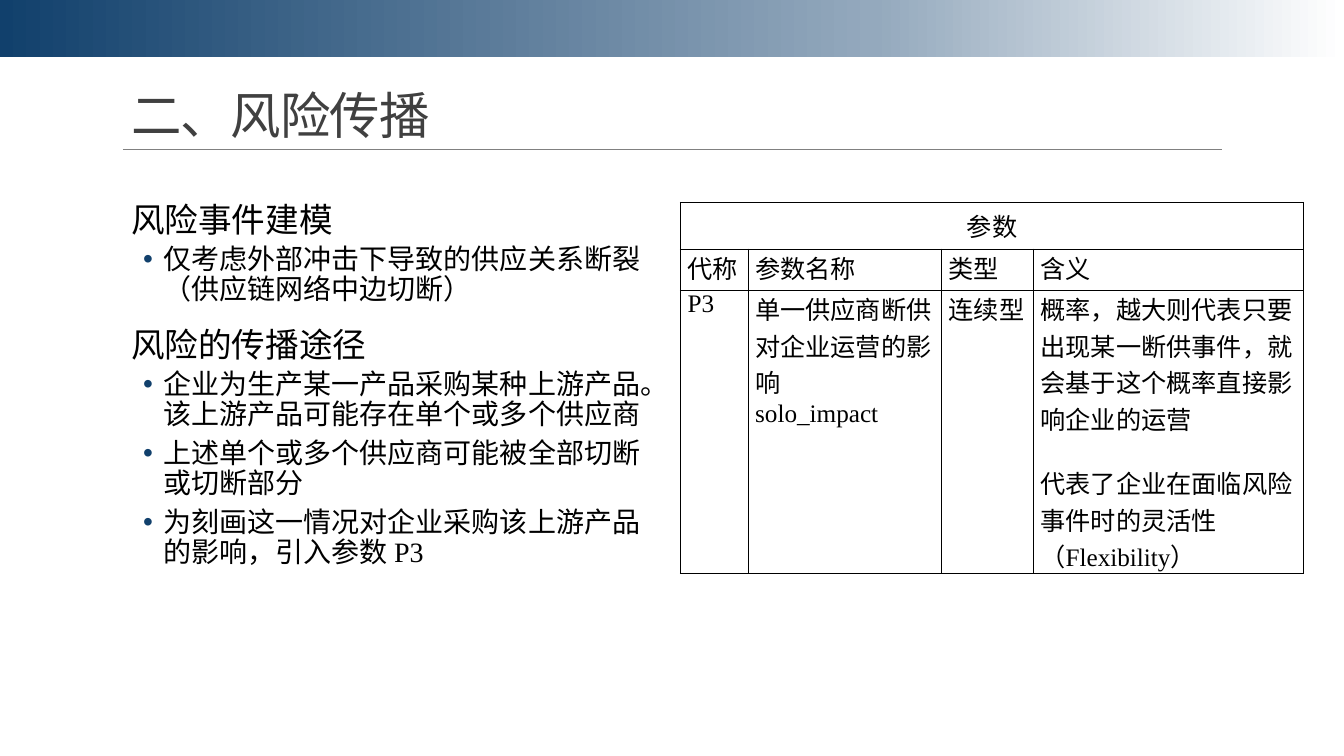
from copy import deepcopy

from lxml import etree
from pptx import Presentation, util as u
from pptx.dml.color import RGBColor
from pptx.enum import lang, shapes, text
from pptx.oxml import parse_xml
from pptx.oxml.ns import nsdecls, qn

FONT = "Times New Roman"
NAVY, BLACK, GREY, RULE_GREY = "11406C", "000000", "404040", "808080"
BAR_STOPS = [(0, NAVY), (0.65, "94A9BD"), (1, "FFFFFF")]

HEADING = {"size": 24, "before": 12, "after": 2, "left": 0.1, "indent": 0}
BULLET = {"size": 20, "before": 2, "after": 4, "left": 0.42, "indent": -0.2}

TOPICS = [
    ("风险事件建模", ["仅考虑外部冲击下导致的供应关系断裂（供应链网络中边切断）"]),
    ("风险的传播途径", [
        "企业为生产某一产品采购某种上游产品。该上游产品可能存在单个或多个供应商",
        "上述单个或多个供应商可能被全部切断或切断部分",
        "为刻画这一情况对企业采购该上游产品的影响，引入参数 P3",
    ]),
]

COLUMN_WIDTHS = [0.67, 1.92, 0.91, 2.68]
ROW_HEIGHTS = [0.41, 0.41, 2.52]
PARAMETER_ROWS = [
    [["参数"], [], [], []],
    [["代称"], ["参数名称"], ["类型"], ["含义"]],
    [
        ["P3"],
        ["单一供应商断供对企业运营的影响", "solo_impact"],
        ["连续型"],
        ["概率，越大则代表只要出现某一断供事件，就会基于这个概率直接影响企业的运营",
         "代表了企业在面临风险事件时的灵活性（Flexibility）"],
    ],
]


def color(value):
    """Turn a hex string into a colour."""
    return RGBColor.from_string(value)


def apply(target, values):
    """Set every attribute in a dict of format values."""
    for name, value in values.items():
        setattr(target, name, value)


def place(shape, box):
    """Move a shape to a box of left, top, width and height in inches."""
    names = ("left", "top", "width", "height")
    apply(shape, {name: u.Inches(value) for name, value in zip(names, box)})


def write(paragraph, words, size, ink=BLACK):
    """Fill a paragraph with one formatted run and return the run."""
    run = paragraph.add_run()
    run.text = words
    apply(run.font, {"name": FONT, "size": u.Pt(size),
                     "language_id": lang.MSO_LANGUAGE_ID.SIMPLIFIED_CHINESE})
    run.font.color.rgb = color(ink)
    return run


def add_bar(slide, box):
    """Add the gradient band at the top of the slide."""
    bar = slide.shapes.add_shape(shapes.MSO_SHAPE.RECTANGLE, *map(u.Inches, box))
    bar.shadow.inherit = False
    bar.line.fill.background()
    bar.fill.gradient()
    bar.fill.gradient_angle = 0
    stop_list = next(bar.element.iter(qn("a:gsLst")))
    stop_list.append(deepcopy(stop_list[-1]))
    for stop, (position, shade) in zip(bar.fill.gradient_stops, BAR_STOPS):
        stop.position = position
        stop.color.rgb = color(shade)


def add_rule(slide, box):
    """Add the thin line along the top of a box."""
    left, top, width, _ = box
    rule = slide.shapes.add_connector(
        shapes.MSO_CONNECTOR.STRAIGHT,
        *map(u.Inches, (left, top, left + width, top)))
    rule.line.width = u.Pt(0.5)
    rule.line.color.rgb = color(RULE_GREY)
    etree.SubElement(rule.element.spPr, qn("a:effectLst"))


def add_title(slide, box, words):
    """Place and fill the title placeholder."""
    title = slide.shapes.title
    place(title, box)
    apply(title.text_frame, {"vertical_anchor": text.MSO_ANCHOR.BOTTOM,
                             "auto_size": text.MSO_AUTO_SIZE.NONE,
                             "word_wrap": True})
    paragraph = title.text_frame.paragraphs[0]
    apply(paragraph, {"alignment": text.PP_ALIGN.LEFT, "line_spacing": 0.85})
    run = write(paragraph, words, 36, GREY)
    run.font._element.set("spc", "-50")


def set_list_format(paragraph, style, level):
    """Give a list paragraph its spacing, indents and bullet."""
    apply(paragraph, {"level": level, "line_spacing": 0.9,
                      "space_before": u.Pt(style["before"]),
                      "space_after": u.Pt(style["after"]),
                      "alignment": text.PP_ALIGN.LEFT})
    properties = paragraph._p.get_or_add_pPr()
    properties.set("marL", str(u.Inches(style["left"])))
    properties.set("indent", str(u.Inches(style["indent"])))
    if level:
        shade = etree.SubElement(properties, qn("a:buClr"))
        etree.SubElement(shade, qn("a:srgbClr"), val=NAVY)
        etree.SubElement(properties, qn("a:buFont"), typeface="Arial")
        etree.SubElement(properties, qn("a:buChar"), char="•")
    else:
        etree.SubElement(properties, qn("a:buNone"))


def add_topics(slide, box, topics):
    """Place the body placeholder and fill it with headings and bullets."""
    body = slide.placeholders[1]
    place(body, box)
    frame = body.text_frame
    apply(frame, {"margin_left": 0, "margin_right": 0,
                  "margin_top": u.Inches(0.05), "margin_bottom": u.Inches(0.05),
                  "auto_size": text.MSO_AUTO_SIZE.NONE, "word_wrap": True,
                  "vertical_anchor": text.MSO_ANCHOR.TOP})
    lines = []
    for heading, points in topics:
        lines.append((heading, HEADING, 0))
        lines += [(point, BULLET, 1) for point in points]
    for index, (words, style, level) in enumerate(lines):
        paragraph = frame.add_paragraph() if index else frame.paragraphs[0]
        set_list_format(paragraph, style, level)
        write(paragraph, words, style["size"])


def set_cell_borders(cell):
    """Draw a thin black line on all four sides of a cell."""
    properties = cell._tc.get_or_add_tcPr()
    for side in ("lnL", "lnR", "lnT", "lnB"):
        properties.append(parse_xml(
            f'<a:{side} {nsdecls("a")} w="12700"><a:solidFill>'
            f'<a:srgbClr val="{BLACK}"/></a:solidFill></a:{side}>'))


def fill_cell(cell, lines, is_banner):
    """Format a table cell and write its paragraphs."""
    set_cell_borders(cell)
    cell.fill.background()
    if not is_banner:
        apply(cell, {"margin_left": u.Inches(0.07), "margin_right": u.Inches(0.07),
                     "margin_top": 0, "margin_bottom": 0})
    frame = cell.text_frame
    for index, words in enumerate(lines):
        paragraph = frame.add_paragraph() if index else frame.paragraphs[0]
        if is_banner:
            paragraph.alignment = text.PP_ALIGN.CENTER
        if index and words.startswith("代表"):
            paragraph.space_before = u.Pt(20)
        write(paragraph, words, 18)


def add_parameter_table(slide, box, rows):
    """Add the parameter table with its merged banner row."""
    frame = slide.shapes.add_table(len(rows), len(COLUMN_WIDTHS), *map(u.Inches, box))
    table = frame.table
    apply(table, {"first_row": False, "horz_banding": False})
    for column, width in zip(table.columns, COLUMN_WIDTHS):
        column.width = u.Inches(width)
    for row, height in zip(table.rows, ROW_HEIGHTS):
        row.height = u.Inches(height)
    table.cell(0, 0).merge(table.cell(0, len(COLUMN_WIDTHS) - 1))
    for row_index, row in enumerate(rows):
        for column_index, lines in enumerate(row):
            fill_cell(table.cell(row_index, column_index), lines, row_index == 0)


def main():
    """Build and save the slide."""
    presentation = Presentation()
    apply(presentation, {"slide_width": u.Inches(13.33), "slide_height": u.Inches(7.5)})
    slide = presentation.slides.add_slide(presentation.slide_layouts[1])
    add_bar(slide, (0, 0, 13.33, 0.57))
    add_rule(slide, (1.22, 1.48, 10.9, 0))
    add_title(slide, (1.2, 0.58, 11, 0.91), "二、风险传播")
    add_topics(slide, (1.2, 1.97, 5.4, 5.48), TOPICS)
    add_parameter_table(slide, (6.75, 2.01, 6.17, 3.33), PARAMETER_ROWS)
    presentation.save("out.pptx")


if __name__ == "__main__":
    main()
